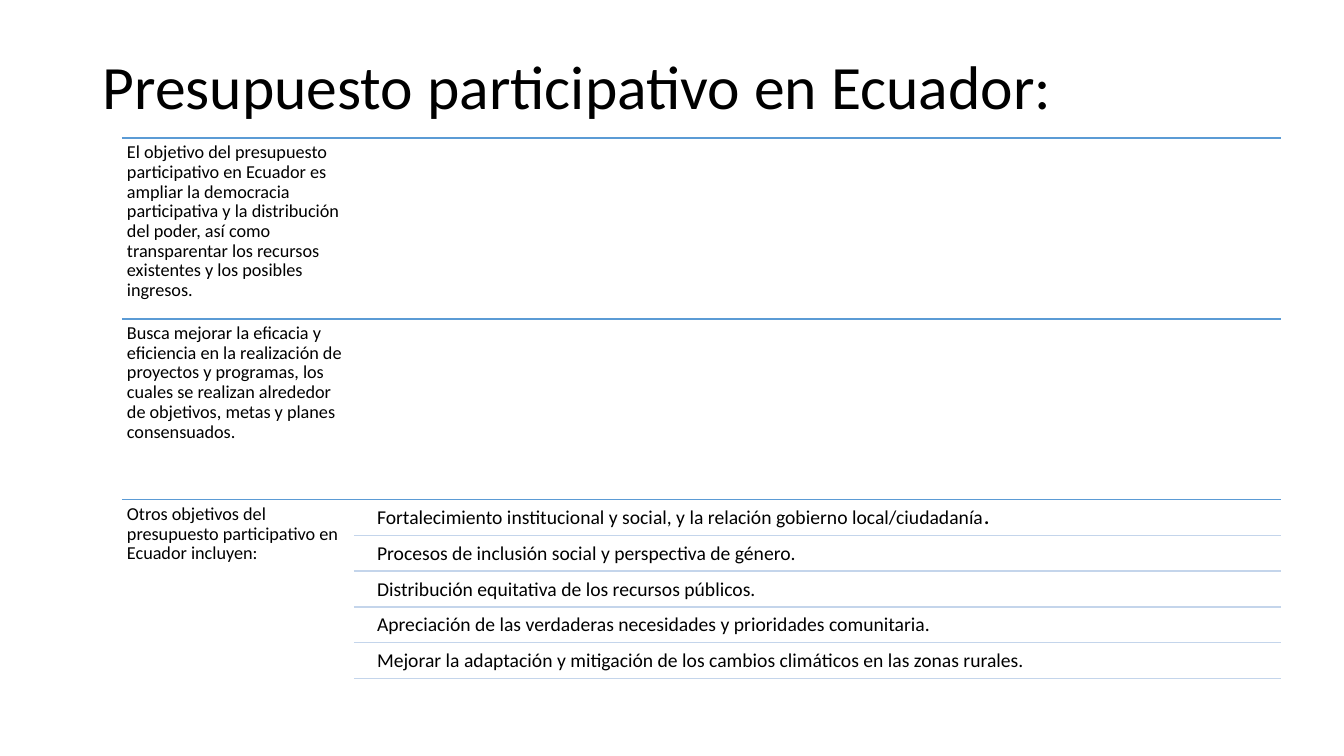
from lxml import etree
from pptx import Presentation
from pptx.dml.color import RGBColor
from pptx.enum.shapes import MSO_CONNECTOR
from pptx.enum.text import MSO_ANCHOR
from pptx.oxml.ns import qn
from pptx.util import Inches, Pt

STRAIGHT = MSO_CONNECTOR.STRAIGHT
TOP, MIDDLE = MSO_ANCHOR.TOP, MSO_ANCHOR.MIDDLE
COLORS = {"text": "000000", "section": "5B9BD5", "item": "C4D5EB"}
FONT = "Calibri"

TITLE = "Presupuesto participativo en Ecuador:"
# Each section: statement, then its items as lists of (text, bold) spans
SECTIONS = [
    ("El objetivo del presupuesto participativo en Ecuador es ampliar la "
     "democracia participativa y la distribución del poder, así como "
     "transparentar los recursos existentes y los posibles ingresos.", []),
    ("Busca mejorar la eficacia y eficiencia en la realización de proyectos y "
     "programas, los cuales se realizan alrededor de objetivos, metas y planes "
     "consensuados.", []),
    ("Otros objetivos del presupuesto participativo en Ecuador incluyen:", [
        [("Fortalecimiento institucional y social, y la relación gobierno "
          "local/ciudadanía", False), (".", True)],
        [("Procesos de inclusión social y perspectiva de género.", False)],
        [("Distribución equitativa de los recursos públicos.", False)],
        [("Apreciación de las verdaderas necesidades y prioridades "
          "comunitaria.", False)],
        [("Mejorar la adaptación y mitigación de los cambios climáticos en las "
          "zonas rurales.", False)],
    ]),
]


def add_text(page, spans, left, top, width, height, size, inset=(0.05, 0.05), anchor=TOP):
    """Add one paragraph of (text, bold) spans; inset is (sides, top and bottom)."""
    box = page.shapes.add_textbox(Inches(left), Inches(top), Inches(width), Inches(height))
    frame = box.text_frame
    frame.word_wrap = True
    frame.vertical_anchor = anchor
    frame.margin_left = frame.margin_right = Inches(inset[0])
    frame.margin_top = frame.margin_bottom = Inches(inset[1])
    para = frame.paragraphs[0]
    para.line_spacing = 0.9
    for text, bold in spans:
        span = para.add_run()
        span.text = text
        span.font.name = FONT
        span.font.size = Pt(size)
        span.font.bold = bold
        span.font.color.rgb = RGBColor.from_string(COLORS["text"])


def add_rule(page, left, right, top, color):
    rule = page.shapes.add_connector(
        STRAIGHT, Inches(left), Inches(top), Inches(right), Inches(top))
    rule.line.color.rgb = RGBColor.from_string(COLORS[color])
    rule.line.width = Pt(1)
    etree.SubElement(rule._element.spPr, qn("a:effectLst"))


def add_items(page, items, left, top, width, height):
    """Stack the items evenly, each with a rule below it."""
    indent, gap = 0.17, 0.02
    pitch = height / len(items)
    for index, spans in enumerate(items):
        item_top = top + index * pitch
        add_text(page, spans, left + indent, item_top + gap, width - indent,
                 pitch - gap, size=14, inset=(0.06, 0.06))
        add_rule(page, left, left + width, item_top + pitch, "item")


def add_sections(page, left, top, width, height):
    """Stack equal sections: rule on top, statement at left, items at right."""
    pitch = height / len(SECTIONS)
    statement_width = width / 5
    for index, (statement, items) in enumerate(SECTIONS):
        section_top = top + index * pitch
        add_rule(page, left, left + width, section_top, "section")
        add_text(page, [(statement, False)], left, section_top,
                 statement_width, pitch, size=13)
        if items:
            add_items(page, items, left + statement_width, section_top,
                      width - statement_width, pitch - gap_below(pitch))


def gap_below(pitch):
    """Space left free under the last item of a section."""
    return pitch / 100


def main():
    deck = Presentation()
    deck.slide_width, deck.slide_height = Inches(13.33), Inches(7.5)
    page = deck.slides.add_slide(deck.slide_layouts[6])
    add_text(page, [(TITLE, False)], 0.92, 0.4, 11.5, 0.97, size=44,
             inset=(0.1, 0.05), anchor=MIDDLE)
    add_sections(page, 1.21, 1.37, 11.5, 5.38)
    deck.save("out.pptx")


if __name__ == "__main__":
    main()
